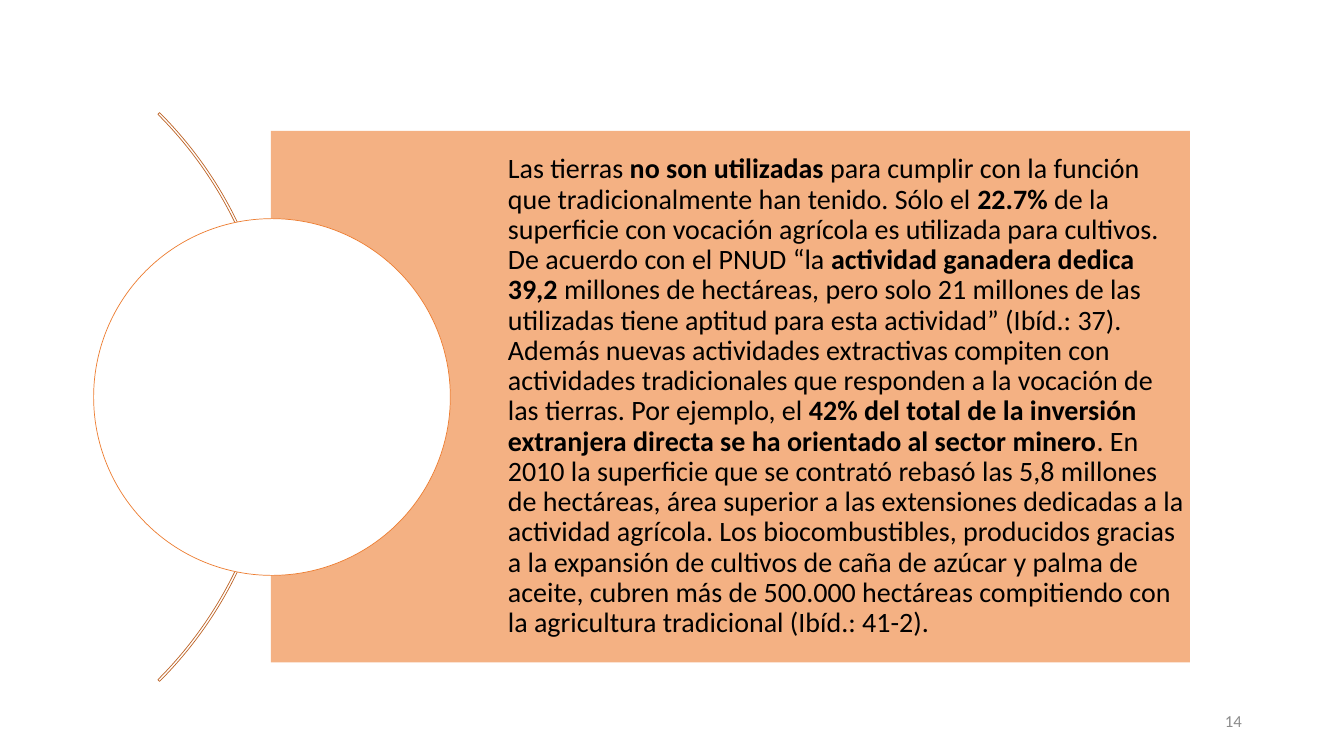
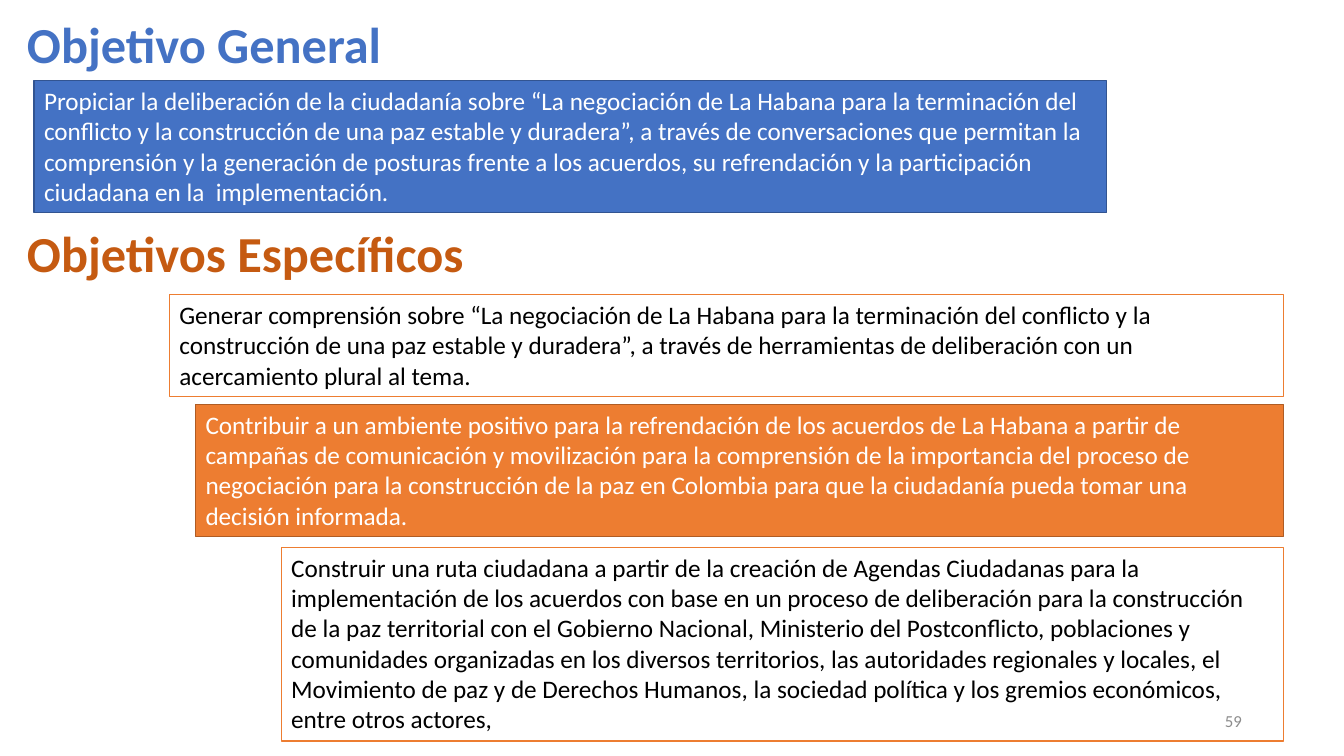
from pptx import Presentation, util as u
from pptx.dml.color import RGBColor
from pptx.enum import shapes, text

THEME = {
    "font": "Calibri",
    "colors": {
        "white": "FFFFFF", "black": "000000", "gray": "8C8C8C",
        "blue": "4472C4", "dark blue": "325491",
        "orange": "ED7D31", "light orange": "F4B183",
        "burnt orange": "C55A11", "arc orange": "BE6427", "brown": "AF5C24",
    },
    "sizes": {"title": 36, "panel": 20, "body": 18, "number": 12},
}
TOP, MIDDLE = text.MSO_ANCHOR.TOP, text.MSO_ANCHOR.MIDDLE
SHAPE = shapes.MSO_SHAPE


def add_box(slide, kind, bounds, fill=None, line=None, line_width=1):
    """Add a preset shape, or a text box when kind is None."""
    lengths = [u.Cm(value) for value in bounds]
    if kind is None:
        return slide.shapes.add_textbox(*lengths)
    shape = slide.shapes.add_shape(kind, *lengths)
    shape.shadow.inherit = False
    for part, color in ((shape.fill, fill), (shape.line.fill, line)):
        if color:
            part.solid()
            part.fore_color.rgb = RGBColor.from_string(THEME["colors"][color])
        else:
            part.background()
    if line:
        shape.line.width = u.Pt(line_width)
    return shape


def write(shape, segments, size, color, bold=False, frame_format=None, paragraph_format=None):
    """Write one paragraph; every second segment is emphasised in bold."""
    frame = shape.text_frame
    paragraph = frame.paragraphs[0]
    frame_values = {"word_wrap": True, "vertical_anchor": MIDDLE, **(frame_format or {})}
    paragraph_values = {"alignment": text.PP_ALIGN.LEFT, **(paragraph_format or {})}
    for target, values in ((frame, frame_values), (paragraph, paragraph_values)):
        for name, value in values.items():
            setattr(target, name, value)
    for index, segment in enumerate(segments):
        run = paragraph.add_run()
        run.text = segment
        font_values = {"name": THEME["font"], "size": u.Pt(THEME["sizes"][size]),
                       "bold": bold or index % 2 == 1}
        for name, value in font_values.items():
            setattr(run.font, name, value)
        run.font.color.rgb = RGBColor.from_string(THEME["colors"][color])


presentation = Presentation()
presentation.slide_width, presentation.slide_height = u.Cm(33.87), u.Cm(19.05)
blank = presentation.slide_layouts[6]
land_slide, goals_slide = [presentation.slides.add_slide(blank) for _ in range(2)]

# Land use: arc, text panel and circle
arc = add_box(land_slide, SHAPE.BLOCK_ARC, (-13.28, -0.13, 20.27, 20.27),
              line="arc orange", line_width=0.5)
for index, value in enumerate((189, 27, 0.003)):
    arc.adjustments[index] = value

land_text = [
    "Las tierras ",
    "no son utilizadas ",
    "para cumplir con la función que tradicionalmente han tenido. Sólo el ",
    "22.7%",
    " de la superficie con vocación agrícola es utilizada para cultivos. De acuerdo con el "
    "PNUD “la ",
    "actividad ganadera dedica 39,2 ",
    "millones de hectáreas, pero solo 21 millones de las utilizadas tiene aptitud para esta "
    "actividad” (Ibíd.: 37). Además nuevas actividades extractivas compiten con actividades "
    "tradicionales que responden a la vocación de las tierras. Por ejemplo, el ",
    "42% del total de la inversión extranjera directa se ha orientado al sector minero",
    ". En 2010 la superficie que se contrató rebasó las 5,8 millones de hectáreas, área "
    "superior a las extensiones dedicadas a la actividad agrícola. Los biocombustibles, "
    "producidos gracias a la expansión de cultivos de caña de azúcar y palma de aceite, "
    "cubren más de 500.000 hectáreas compitiendo con la agricultura tradicional "
    "(Ibíd.: 41-2).",
]
panel = add_box(land_slide, SHAPE.RECTANGLE, (6.83, 3.3, 23.16, 13.39), fill="light orange")
panel_margins = {"margin_left": u.Cm(5.97), "margin_right": u.Cm(0.15),
                 "margin_top": u.Cm(0.15), "margin_bottom": u.Cm(0.15)}
write(panel, land_text, "panel", "black", frame_format=panel_margins,
      paragraph_format={"line_spacing": 0.9})
add_box(land_slide, SHAPE.OVAL, (2.36, 5.51, 8.99, 8.99), fill="white", line="orange",
        line_width=0.5)

# Goals: headings
for top, heading, color in ((0.33, "Objetivo General", "blue"),
                            (5.61, "Objetivos Específicos", "burnt orange")):
    title = add_box(goals_slide, None, (0.43, top, 22.86, 1.7))
    write(title, [heading], "title", color, bold=True, paragraph_format={"line_spacing": 0.9})

# Goals: general goal, then specific goals sharing a right edge
RIGHT_EDGE = 32.35
goals = [
    (0.86, 2.03, 27.89, 3.33, "blue", "dark blue", "white",
     "Propiciar la deliberación de la ciudadanía sobre “La negociación de La Habana para la "
     "terminación del conflicto y la construcción de una paz estable y duradera”, a través de "
     "conversaciones que permitan la comprensión y la generación de posturas frente a los "
     "acuerdos, su refrendación y la participación ciudadana en la  implementación."),
    (4.27, 7.42, RIGHT_EDGE, 2.57, "white", "orange", "black",
     "Generar comprensión sobre “La negociación de La Habana para la terminación del conflicto "
     "y la construcción de una paz estable y duradera”, a través de herramientas de "
     "deliberación con un acercamiento plural al tema."),
    (4.93, 10.19, RIGHT_EDGE, 3.33, "orange", "brown", "white",
     "Contribuir a un ambiente positivo para la refrendación de los acuerdos de La Habana a "
     "partir de campañas de comunicación y movilización para la comprensión de la importancia "
     "del proceso de negociación para la construcción de la paz en Colombia para que la "
     "ciudadanía pueda tomar una decisión informada."),
    (7.09, 13.79, RIGHT_EDGE, 4.88, "white", "orange", "black",
     "Construir una ruta ciudadana a partir de la creación de Agendas Ciudadanas para la "
     "implementación de los acuerdos con base en un proceso de deliberación para la "
     "construcción de la paz territorial con el Gobierno Nacional, Ministerio del "
     "Postconflicto, poblaciones y comunidades organizadas en los diversos territorios, las "
     "autoridades regionales y locales, el Movimiento de paz y de Derechos Humanos, la "
     "sociedad política y los gremios económicos, entre otros actores,"),
]
goal_format = {"vertical_anchor": TOP, "auto_size": text.MSO_AUTO_SIZE.SHAPE_TO_FIT_TEXT}
for left, top, right, height, fill, line, color, goal in goals:
    box = add_box(goals_slide, SHAPE.RECTANGLE, (left, top, right - left, height), fill, line)
    write(box, [goal], "body", color, frame_format=goal_format)

# Slide numbers
for slide, number in ((land_slide, "14"), (goals_slide, "59")):
    box = add_box(slide, None, (23.93, 17.65, 7.62, 1.02))
    write(box, [number], "number", "gray", paragraph_format={"alignment": text.PP_ALIGN.RIGHT})

presentation.save("out.pptx")
